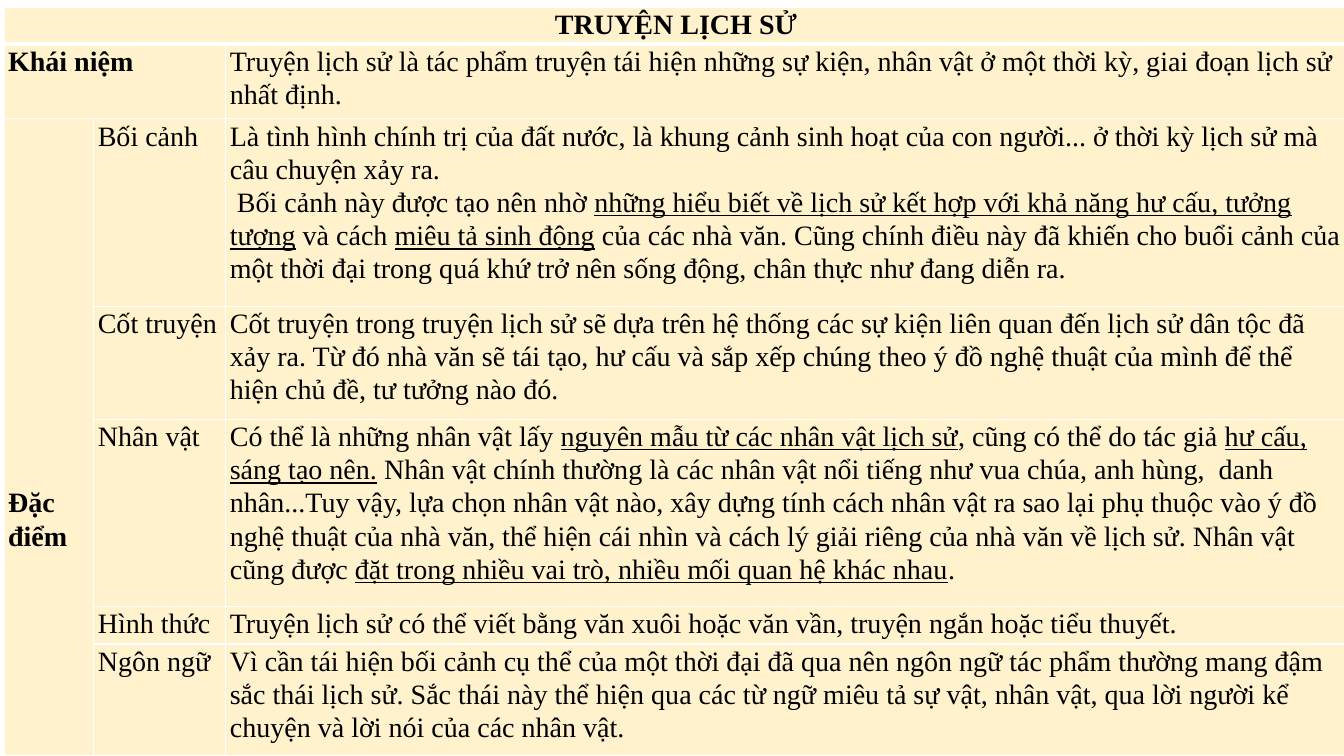
from pptx import Presentation
from pptx.dml.color import RGBColor
from pptx.enum.text import PP_ALIGN
from pptx.oxml import parse_xml
from pptx.oxml.ns import nsdecls
from pptx.util import Inches, Pt

CREAM, WHITE, BLACK = "FFF2CC", "FFFFFF", "000000"
COLUMN_WIDTHS = [0.89, 1.31, 11.13]
ROW_HEIGHTS = [0.37, 0.74, 1.86, 1.12, 1.86, 0.37, 1.11]

HEADINGS = [
    (0, 0, "TRUYỆN LỊCH SỬ", PP_ALIGN.CENTER, 0),
    (1, 0, "Khái niệm", PP_ALIGN.LEFT, 0),
    (2, 0, "Đặc điểm", PP_ALIGN.LEFT, 3.64),
]
LABELS = ["Bối cảnh", "Cốt truyện", "Nhân vật", "Hình thức", "Ngôn ngữ"]
# Underscores enclose underlined words.
DESCRIPTIONS = [
    ["Truyện lịch sử là tác phẩm truyện tái hiện những sự kiện, nhân vật ở một thời kỳ, "
     "giai đoạn lịch sử nhất định."],
    ["Là tình hình chính trị của đất nước, là khung cảnh sinh hoạt của con người... "
     "ở thời kỳ lịch sử mà câu chuyện xảy ra.",
     "Bối cảnh này được tạo nên nhờ _những hiểu biết về lịch sử kết hợp với khả năng hư cấu, "
     "tưởng tượng_ và cách _miêu tả sinh động_ của các nhà văn. Cũng chính điều này đã khiến "
     "cho buổi cảnh của một thời đại trong quá khứ trở nên sống động, chân thực như đang diễn ra."],
    ["Cốt truyện trong truyện lịch sử sẽ dựa trên hệ thống các sự kiện liên quan đến lịch sử "
     "dân tộc đã xảy ra. Từ đó nhà văn sẽ tái tạo, hư cấu và sắp xếp chúng theo ý đồ nghệ thuật "
     "của mình để thể hiện chủ đề, tư tưởng nào đó."],
    ["Có thể là những nhân vật lấy _nguyên mẫu từ các nhân vật lịch sử_, cũng có thể do tác giả "
     "_hư cấu, sáng tạo nên._ Nhân vật chính thường là các nhân vật nổi tiếng như vua chúa, "
     "anh hùng,  danh nhân...Tuy vậy, lựa chọn nhân vật nào, xây dựng tính cách nhân vật ra sao "
     "lại phụ thuộc vào ý đồ nghệ thuật của nhà văn, thể hiện cái nhìn và cách lý giải riêng của "
     "nhà văn về lịch sử. Nhân vật cũng được _đặt trong nhiều vai trò, nhiều mối quan hệ khác nhau_."],
    ["Truyện lịch sử có thể viết bằng văn xuôi hoặc văn vần, truyện ngắn hoặc tiểu thuyết."],
    ["Vì cần tái hiện bối cảnh cụ thể của một thời đại đã qua nên ngôn ngữ tác phẩm thường mang "
     "đậm sắc thái lịch sử. Sắc thái này thể hiện qua các từ ngữ miêu tả sự vật, nhân vật, "
     "qua lời người kể chuyện và lời nói của các nhân vật."],
]


def rgb(value):
    return RGBColor.from_string(value)


def write(cell, paragraphs, bold=False, align=PP_ALIGN.LEFT, top=0):
    """Fill a cell with paragraphs, underlining the words between underscores."""
    cell.margin_top = Inches(top)
    frame = cell.text_frame
    for index, text in enumerate(paragraphs):
        para = frame.add_paragraph() if index else frame.paragraphs[0]
        para.alignment = align
        para.line_spacing = 1.07
        if index:
            para._p.get_or_add_pPr().set("indent", str(Inches(0.07)))
        for part, words in enumerate(text.split("_")):
            span = para.add_run()
            span.text = words
            span.font.name = "Times New Roman"
            span.font.size = Pt(20)
            span.font.bold = bold
            span.font.underline = part % 2 == 1
            span.font.color.rgb = rgb(BLACK)


deck = Presentation()
deck.slide_width, deck.slide_height = Inches(13.33), Inches(7.5)
page = deck.slides.add_slide(deck.slide_layouts[6])

table = page.shapes.add_table(
    len(ROW_HEIGHTS), len(COLUMN_WIDTHS),
    Inches(0.04), Inches(0.07), Inches(13.33), Inches(7.43)).table
for column, width in zip(table.columns, COLUMN_WIDTHS):
    column.width = Inches(width)
for row, height in zip(table.rows, ROW_HEIGHTS):
    row.height = Inches(height)

for number, row in enumerate(table.rows):
    for cell in row.cells:
        cell.margin_left = cell.margin_right = Inches(0.04)
        cell.margin_top = cell.margin_bottom = 0
        for side in "LRTB":
            weight = Pt(3 if number == 0 and side == "B" else 1)
            cell._tc.get_or_add_tcPr().append(parse_xml(
                f'<a:ln{side} {nsdecls("a")} w="{weight}"><a:solidFill>'
                f'<a:srgbClr val="{WHITE}"/></a:solidFill></a:ln{side}>'))
        cell.fill.solid()
        cell.fill.fore_color.rgb = rgb(CREAM)

table.cell(0, 0).merge(table.cell(0, 2))
table.cell(1, 0).merge(table.cell(1, 1))
table.cell(2, 0).merge(table.cell(6, 0))

for row, column, text, align, top in HEADINGS:
    write(table.cell(row, column), [text], bold=True, align=align, top=top)
for row, label in enumerate(LABELS, start=2):
    write(table.cell(row, 1), [label])
for row, paragraphs in enumerate(DESCRIPTIONS, start=1):
    write(table.cell(row, 2), paragraphs)

deck.save("out.pptx")
